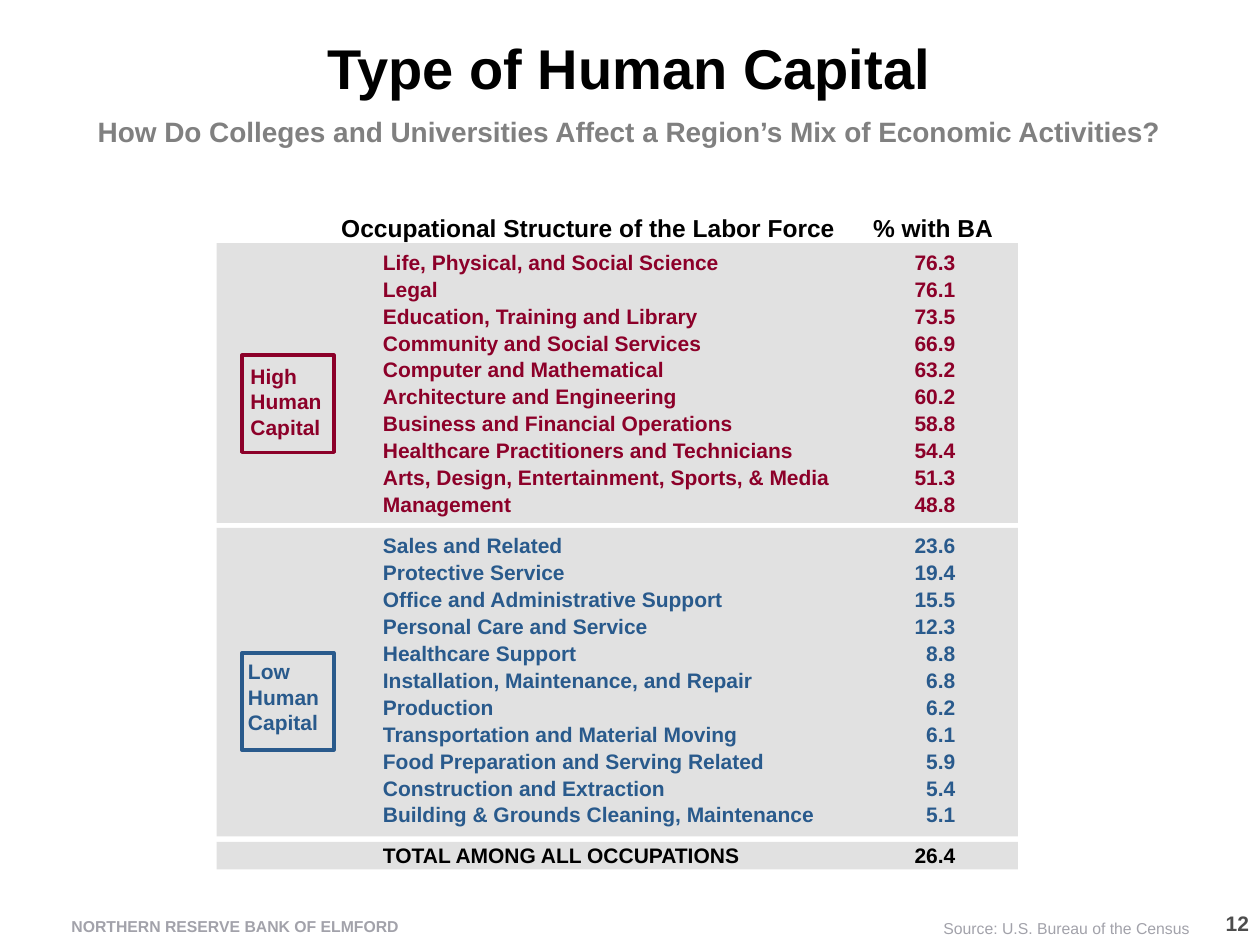
from pptx import Presentation
from pptx.dml.color import RGBColor
from pptx.enum.shapes import MSO_SHAPE
from pptx.enum.text import PP_ALIGN
from pptx.util import Cm, Pt

RED = RGBColor(0x8C, 0x00, 0x29)
BLUE = RGBColor(0x29, 0x5A, 0x8C)
BLACK = RGBColor(0, 0, 0)
GREY = RGBColor(0x80, 0x80, 0x80)
PALE = RGBColor(0xA2, 0xA2, 0xAA)
DARK = RGBColor(0x4D, 0x4D, 0x4D)
BAND = RGBColor(0xE1, 0xE1, 0xE1)

HIGH = [
    ("Life, Physical, and Social Science", "76.3"),
    ("Legal", "76.1"),
    ("Education, Training and Library", "73.5"),
    ("Community and Social Services", "66.9"),
    ("Computer and Mathematical", "63.2"),
    ("Architecture and Engineering", "60.2"),
    ("Business and Financial Operations", "58.8"),
    ("Healthcare Practitioners and Technicians", "54.4"),
    ("Arts, Design, Entertainment, Sports, & Media", "51.3"),
    ("Management", "48.8"),
]
LOW = [
    ("Sales and Related", "23.6"),
    ("Protective Service", "19.4"),
    ("Office and Administrative Support", "15.5"),
    ("Personal Care and Service", "12.3"),
    ("Healthcare Support", "8.8"),
    ("Installation, Maintenance, and Repair", "6.8"),
    ("Production", "6.2"),
    ("Transportation and Material Moving", "6.1"),
    ("Food Preparation and Serving Related", "5.9"),
    ("Construction and Extraction", "5.4"),
    ("Building & Grounds Cleaning, Maintenance", "5.1"),
]
TOTAL = [("TOTAL AMONG ALL OCCUPATIONS", "26.4")]
GROUPS = [(HIGH, RED), (LOW, BLUE), (TOTAL, BLACK)]
BANDS = [(4.9, 5.64), (10.64, 6.22), (16.97, 0.56)]
COLS = [(7.47, 9.88, PP_ALIGN.LEFT), (17.68, 1.83, PP_ALIGN.RIGHT)]
TAGS = [
    ("High Human Capital", RED, 7.16, 4.8, 7.21),
    ("Low Human Capital", BLUE, 13.16, 4.75, 13.16),
]
TITLE = [
    ("Type of Human Capital", 32, BLACK, True, 0),
    ("How Do Colleges and Universities Affect a Region’s Mix of Economic Activities?",
     16, GREY, True, 8),
]
LABELS = [
    ("Occupational Structure of the Labor Force", 6.63, 4.17, 11.38, 14, BLACK, True),
    ("% with BA", 17.35, 4.17, 2.95, 14, BLACK, True),
    ("Source: U.S. Bureau of the Census", 18.77, 18.39, 5.6, 9, PALE, False),
    ("NORTHERN RESERVE BANK OF ELMFORD", 1.19, 18.36, 11.3, 9, PALE, True),
    ("12", 24.31, 18.24, 1.27, 12, DARK, True),
]

deck = Presentation()
deck.slide_width, deck.slide_height = Cm(25.4), Cm(19.05)
slide = deck.slides.add_slide(deck.slide_layouts[6])


def add_rect(x, y, w, h, fill=None, line=None):
    rect = slide.shapes.add_shape(MSO_SHAPE.RECTANGLE, Cm(x), Cm(y), Cm(w), Cm(h))
    rect.shadow.inherit = False
    if fill is None:
        rect.fill.background()
    else:
        rect.fill.solid()
        rect.fill.fore_color.rgb = fill
    if line is None:
        rect.line.fill.background()
    else:
        rect.line.color.rgb = line
        rect.line.width = Pt(2)


def add_text(x, y, w, h, lines, align=PP_ALIGN.LEFT):
    frame = slide.shapes.add_textbox(Cm(x), Cm(y), Cm(w), Cm(h)).text_frame
    frame.word_wrap = True
    for i, (text, size, color, bold, gap) in enumerate(lines):
        para = frame.add_paragraph() if i else frame.paragraphs[0]
        para.alignment = align
        para.space_before = Pt(gap)
        run = para.add_run()
        run.text = text
        font = run.font
        font.name, font.size, font.bold = "Arial", Pt(size), bold
        font.color.rgb = color


for top, tall in BANDS:
    add_rect(4.37, top, 16.15, tall, fill=BAND)

for col, (left, wide, align) in enumerate(COLS):
    lines = [
        (row[col], 12, color, True, 9 if n and not i else 1)
        for n, (rows, color) in enumerate(GROUPS)
        for i, row in enumerate(rows)
    ]
    add_text(left, 4.9, wide, 13.26, lines, align)

for text, color, top, left, base in TAGS:
    add_rect(4.88, top, 1.85, 1.96, line=color)
    add_text(left, base, 2.59, 1.95, [(text, 12, color, True, 1)])

for text, left, top, wide, size, color, bold in LABELS:
    align = PP_ALIGN.CENTER if text == "12" else PP_ALIGN.LEFT
    add_text(left, top, wide, 0.6, [(text, size, color, bold, 0)], align)

add_text(0.2, 0.55, 24.97, 3, TITLE, PP_ALIGN.CENTER)
deck.save("out.pptx")
